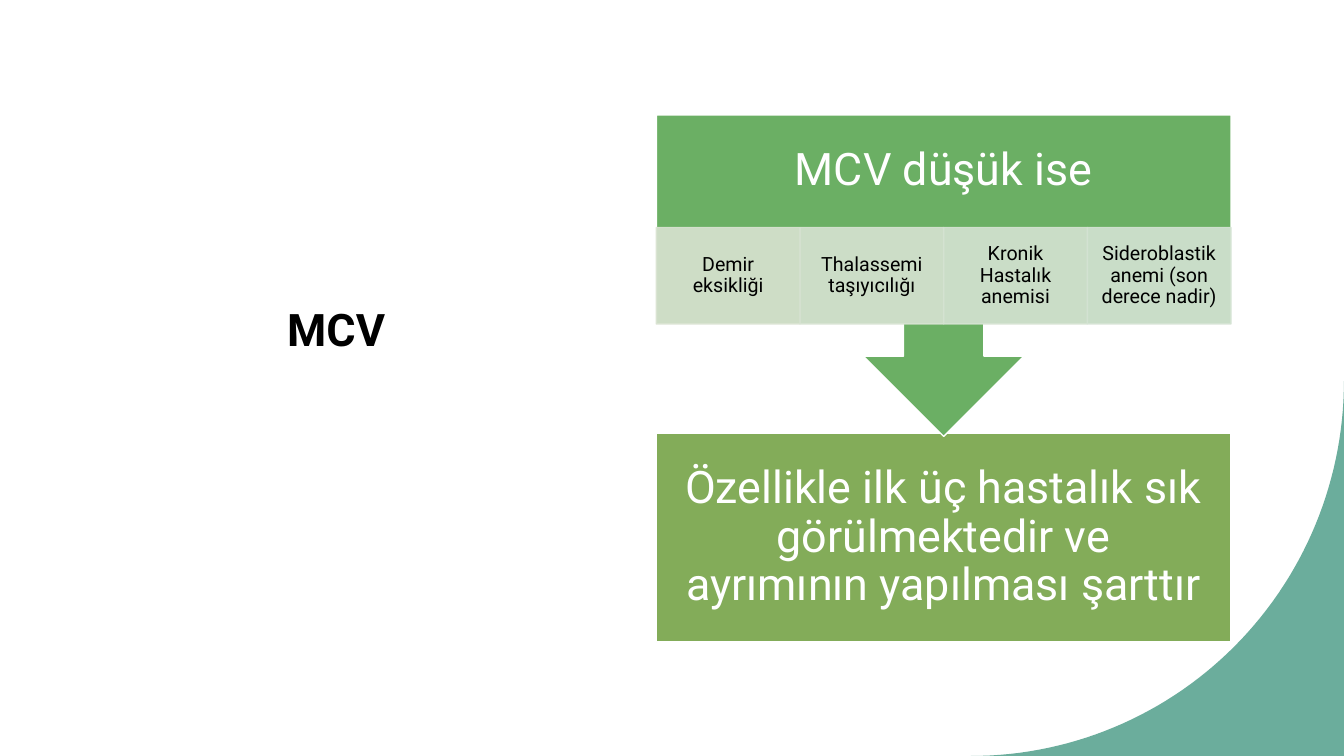
import math

import pptx
import pptx.dml.color
import pptx.enum.shapes
import pptx.enum.text
import pptx.oxml.ns
import pptx.util
from lxml import etree

Inches = pptx.util.Inches
Pt = pptx.util.Pt
SHAPES = pptx.enum.shapes.MSO_SHAPE

FONT = "Roboto"
COLORS = {
    "white": "FFFFFF",
    "black": "000000",
    "corner": "6BAD9C",
    "callout": "6BAF64",
    "conclusion": "83AC59",
}
CAUSES = [
    ("Demir eksikliği", "D9E3D1"),
    ("Thalassemi taşıyıcılığı", "D7E3D2"),
    ("Kronik Hastalık anemisi", "D5E3D2"),
    ("Sideroblastik anemi (son derece nadir)", "D4E3D3"),
]


def rgb(value):
    """Turn a hex string into a colour."""
    return pptx.dml.color.RGBColor.from_string(value)


def write_text(shape, text, size, color, margins=(0.1, 0.05), spacing=0.9, bold=False):
    """Write one centred paragraph into a shape."""
    frame = shape.text_frame
    frame.word_wrap = True
    frame.vertical_anchor = pptx.enum.text.MSO_ANCHOR.MIDDLE
    frame.margin_left = frame.margin_right = Inches(margins[0])
    frame.margin_top = frame.margin_bottom = Inches(margins[1])
    paragraph = frame.paragraphs[0]
    paragraph.alignment = pptx.enum.text.PP_ALIGN.CENTER
    paragraph.line_spacing = spacing
    run = paragraph.add_run()
    run.text = text
    run.font.name = FONT
    run.font.size = Pt(size)
    run.font.bold = bold
    run.font.color.rgb = rgb(color)


def add_block(slide, kind, box, fill, line):
    """Add a filled and outlined preset shape."""
    shape = slide.shapes.add_shape(kind, *map(Inches, box))
    shape.shadow.inherit = False
    shape.fill.solid()
    shape.fill.fore_color.rgb = rgb(fill)
    shape.line.color.rgb = rgb(line)
    shape.line.width = Pt(1)
    return shape


def set_opacity(shape, percent):
    """Make the fill and outline of a shape partly transparent."""
    for color in shape._element.spPr.iter(pptx.oxml.ns.qn("a:srgbClr")):
        alpha = etree.SubElement(color, pptx.oxml.ns.qn("a:alpha"))
        alpha.set("val", str(percent * 1000))


def add_corner(slide, left, top, right, bottom):
    """Fill the corner outside a quarter circle."""
    width, height = right - left, bottom - top
    angles = [math.radians(90 * step / 60) for step in range(61)]
    arc = [
        (Inches(left + width * math.cos(angle)), Inches(top + height * math.sin(angle)))
        for angle in angles
    ]
    builder = slide.shapes.build_freeform(Inches(right), Inches(bottom))
    builder.add_line_segments(arc, close=True)
    corner = builder.convert_to_shape()
    corner.shadow.inherit = False
    corner.fill.solid()
    corner.fill.fore_color.rgb = rgb(COLORS["corner"])
    corner.line.fill.background()


def add_title(slide, left, top, width, height):
    """Add the slide title."""
    title = slide.shapes.add_textbox(*map(Inches, (left, top, width, height)))
    write_text(title, "MCV", 32, COLORS["black"], spacing=1.1, bold=True)


def add_conclusion(slide, left, top, width, height):
    """Add the box that the arrow points to."""
    box = (left, top, width, height)
    block = add_block(slide, SHAPES.RECTANGLE, box, COLORS["conclusion"], COLORS["white"])
    text = "Özellikle ilk üç hastalık sık görülmektedir ve ayrımının yapılması şarttır"
    write_text(block, text, 32, COLORS["white"], (0.25, 0.25))


def add_causes(slide, left, top, width, height):
    """Add the row of equal cells naming the causes."""
    cell_width = width / len(CAUSES)
    for index, (text, fill) in enumerate(CAUSES):
        box = (left + index * cell_width, top, cell_width, height)
        cell = add_block(slide, SHAPES.RECTANGLE, box, fill, fill)
        set_opacity(cell, 90)
        write_text(cell, text, 14, COLORS["black"], (0.11, 0.02))


def add_low_mcv(slide, left, top, width, height):
    """Add the arrow callout with its heading and causes."""
    box = (left, top, width, height)
    callout = add_block(slide, SHAPES.UP_ARROW_CALLOUT, box, COLORS["callout"], COLORS["white"])
    callout.rotation = 180
    heading_height = 0.35 * height
    heading = slide.shapes.add_textbox(*map(Inches, (left, top, width, heading_height)))
    write_text(heading, "MCV düşük ise", 32, COLORS["white"], (0.25, 0.25))
    add_causes(slide, left, top + heading_height, width, 0.3 * height)


def main():
    """Build the slide and save it."""
    presentation = pptx.Presentation()
    presentation.slide_width = Inches(13.33)
    presentation.slide_height = Inches(7.5)
    slide = presentation.slides.add_slide(presentation.slide_layouts[6])
    add_corner(slide, 9.63, 3.78, 13.33, 7.5)
    add_title(slide, 1.56, 1.81, 3.55, 2.85)
    add_conclusion(slide, 6.51, 4.3, 5.7, 2.07)
    add_low_mcv(slide, 6.51, 1.14, 5.7, 3.19)
    presentation.save("out.pptx")


if __name__ == "__main__":
    main()
